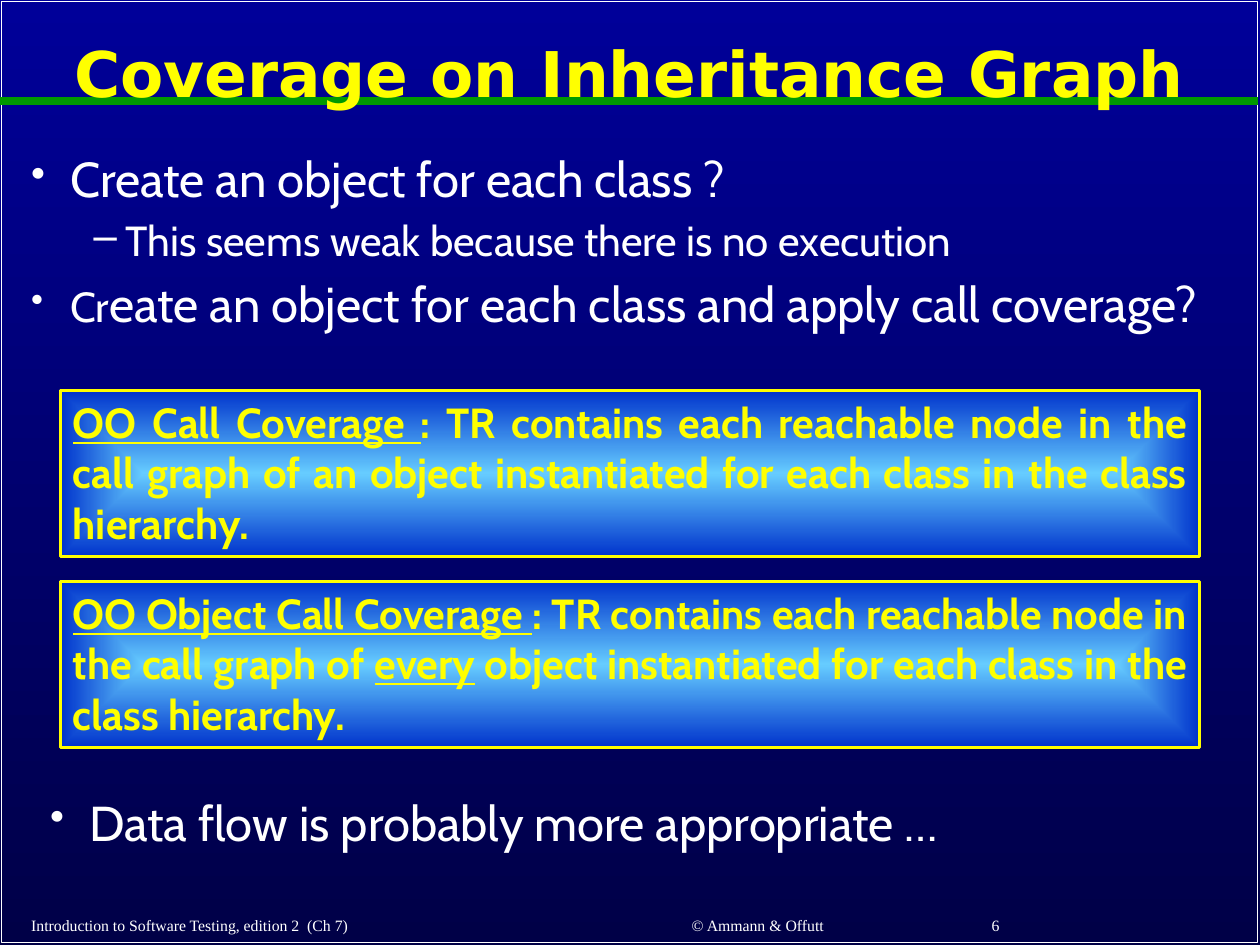
import dataclasses

import pptx
import pptx.dml.color
import pptx.enum.shapes
import pptx.enum.text
import pptx.oxml.ns
import pptx.util
from lxml import etree

Cm = pptx.util.Cm
Pt = pptx.util.Pt
Align = pptx.enum.text.PP_ALIGN
Anchor = pptx.enum.text.MSO_ANCHOR
Rect = pptx.enum.shapes.MSO_SHAPE.RECTANGLE
qn = pptx.oxml.ns.qn


@dataclasses.dataclass(frozen=True)
class Theme:
    """Colours, fonts and type sizes of the slide."""
    white: str = "FFFFFF"
    yellow: str = "FFFF00"
    green: str = "009900"
    back: tuple = ("000099", "000047")
    glow: tuple = ("66CCFF", "0033CC")
    head: str = "DejaVu Sans"
    body: str = "Cabin"
    foot: str = "Times New Roman"
    title: int = 36
    large: int = 28
    small: int = 24
    note: int = 9


theme = Theme()


def rgb(code):
    """Turn a hex code into a colour."""
    return pptx.dml.color.RGBColor.from_string(code)


def blend(fill, pair):
    """Give a fill a gradient of two colours, from top to bottom."""
    fill.gradient()
    fill.gradient_angle = 270
    for stop, code in zip(fill.gradient_stops, pair):
        stop.color.rgb = rgb(code)


def outline(shape, code, width):
    """Give a shape a solid line and no shadow."""
    shape.shadow.inherit = False
    shape.line.color.rgb = rgb(code)
    shape.line.width = Pt(width)


def style(para, name, size, code, bold=False):
    """Set the font of a paragraph."""
    font = para.font
    font.name, font.size, font.bold = name, Pt(size), bold
    font.color.rgb = rgb(code)


def space(para, share):
    """Set the space before a paragraph in percent of its line."""
    props = para._p.get_or_add_pPr()
    gap = etree.SubElement(props, qn("a:spcBef"))
    etree.SubElement(gap, qn("a:spcPct"), val=str(share * 1000))


def bullet(para, mark, left, hang, scale):
    """Give a paragraph a hanging bullet."""
    props = para._p.get_or_add_pPr()
    props.set("marL", str(Cm(left)))
    props.set("indent", str(-Cm(hang)))
    etree.SubElement(props, qn("a:buSzPct"), val=str(scale * 1000))
    etree.SubElement(props, qn("a:buChar"), char=mark)


def textbox(slide, box, anchor=Anchor.TOP, wrap=True):
    """Add an empty text box and return its frame."""
    frame = slide.shapes.add_textbox(*map(Cm, box)).text_frame
    frame.word_wrap = wrap
    frame.vertical_anchor = anchor
    return frame


def border(slide, box, rule):
    """Draw the page border and the green rule at a height within it."""
    left, top, width, height = box
    edge = slide.shapes.add_shape(Rect, *map(Cm, box))
    edge.fill.background()
    outline(edge, theme.white, 1)
    ends = map(Cm, (0, top + rule, left + width, top + rule))
    line = slide.shapes.add_connector(pptx.enum.shapes.MSO_CONNECTOR.STRAIGHT, *ends)
    line.line.color.rgb = rgb(theme.green)
    line.line.width = Pt(4.5)
    etree.SubElement(line._element.spPr, qn("a:effectLst"))


def title(slide, box, words):
    """Place the slide title."""
    para = textbox(slide, box, Anchor.MIDDLE).paragraphs[0]
    para.text, para.alignment, para.line_spacing = words, Align.CENTER, 0.9
    style(para, theme.head, theme.title, theme.yellow, True)


def points(slide, box, items, pitch=0.9):
    """Place a bullet list; each item is a level and sized runs."""
    frame = textbox(slide, box)
    for spot, (level, runs) in enumerate(items):
        para = frame.add_paragraph() if spot else frame.paragraphs[0]
        para.level, para.line_spacing = level, pitch
        space(para, 30)
        bullet(para, *(("–", 1.9, 0.64, 100) if level else ("•", 0.79, 0.79, 85)))
        style(para, theme.body, runs[-1][1], theme.white)
        for words, size in runs:
            run = para.add_run()
            run.text, run.font.size = words, Pt(size)


def panel(slide, box, parts):
    """Place a glowing definition box; every other part is underlined."""
    shape = slide.shapes.add_shape(Rect, *map(Cm, box))
    outline(shape, theme.yellow, 1.5)
    blend(shape.fill, theme.glow)
    grad = shape._element.spPr.find(qn("a:gradFill"))
    grad.remove(grad.find(qn("a:lin")))
    way = etree.SubElement(grad, qn("a:path"), path="shape")
    sides = dict.fromkeys("ltrb", "50000")
    etree.SubElement(way, qn("a:fillToRect"), **sides)
    frame = shape.text_frame
    frame.word_wrap, frame.vertical_anchor = True, Anchor.TOP
    para = frame.paragraphs[0]
    para.alignment = Align.JUSTIFY
    space(para, 50)
    style(para, theme.body, theme.small, theme.yellow, True)
    for spot, words in enumerate(parts):
        run = para.add_run()
        run.text, run.font.underline = words, spot % 2 == 0


def footer(slide, box, cells):
    """Place the footer texts at their offsets within the box."""
    left, top, _, height = box
    for start, width, align, words in cells:
        place = (left + start, top, width, height)
        para = textbox(slide, place, Anchor.MIDDLE, False).paragraphs[0]
        para.text, para.alignment = words, align
        style(para, theme.foot, theme.note, theme.white)


def main():
    """Build and save the slide."""
    deck = pptx.Presentation()
    deck.slide_width, deck.slide_height = Cm(25.4), Cm(19.05)
    slide = deck.slides.add_slide(deck.slide_layouts[6])
    blend(slide.background.fill, theme.back)
    border(slide, (0.03, 0.03, 25.32, 18.97), 2)
    title(slide, (0.33, 0.28, 24.71, 2.54), "Coverage on Inheritance Graph")
    large, small = theme.large, theme.small
    points(slide, (0.38, 3, 24.64, 4.93), [
        (0, [("Create an object for each class ?", large)]),
        (1, [("This seems weak because there is no execution", small)]),
        (0, [("Cr", small),
             ("eate an object for each class and apply call coverage?", large)]),
    ])
    panels = [
        ("OO Call Coverage ",
         ": TR contains each reachable node in the call graph of an object "
         "instantiated for each class in the class hierarchy."),
        ("OO Object Call Coverage ",
         ": TR contains each reachable node in the call graph of ", "every",
         " object instantiated for each class in the class hierarchy."),
    ]
    for row, parts in enumerate(panels):
        panel(slide, (1.22, 7.87 + 3.85 * row, 22.96, 3.35), parts)
    points(slide, (0.76, 16.08, 24.64, 1.3),
           [(0, [("Data flow is probably more appropriate …", large)])], 0.8)
    footer(slide, (0.38, 18.32, 24.64, 0.66), [
        (0, 10.44, Align.LEFT, "Introduction to Software Testing, edition 2  (Ch 7)"),
        (10.87, 8.05, Align.CENTER, "© Ammann & Offutt"),
        (19.36, 5.28, Align.LEFT, "6"),
    ])
    deck.save("out.pptx")


if __name__ == "__main__":
    main()
